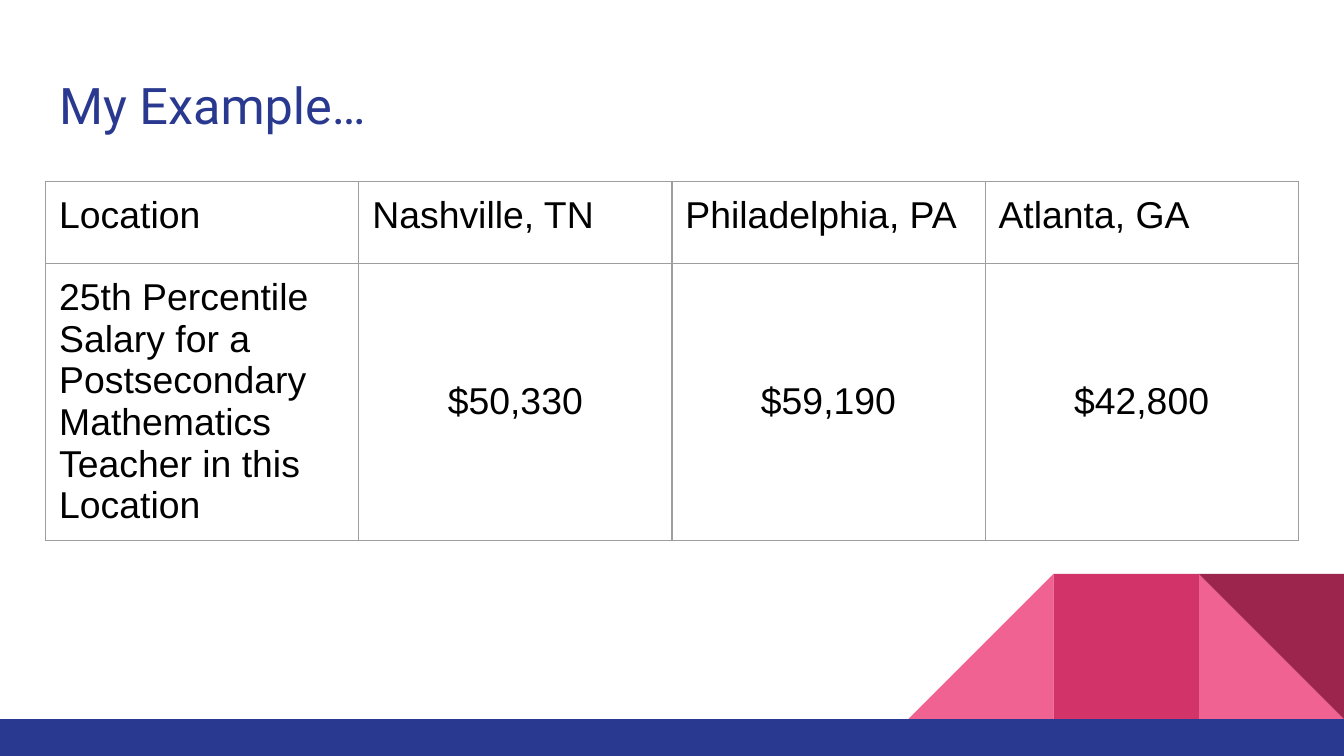
import pptx
import pptx.util
import pptx.oxml
import pptx.dml.color
import pptx.enum.shapes
import pptx.enum.text
from pptx.util import Inches

RGBColor = pptx.dml.color.RGBColor
MSO_SHAPE = pptx.enum.shapes.MSO_SHAPE
PP_ALIGN = pptx.enum.text.PP_ALIGN
MSO_ANCHOR = pptx.enum.text.MSO_ANCHOR

NAVY = RGBColor(0x2A, 0x39, 0x90)
PINK = RGBColor(0xF0, 0x62, 0x92)
ROSE = RGBColor(0xD2, 0x33, 0x69)
WINE = RGBColor(0x9C, 0x25, 0x4D)
BLACK = RGBColor(0, 0, 0)
BORDER = "9E9E9E"


def write(tf, text, size=20, font="Arial", color=BLACK, align=PP_ALIGN.LEFT):
    p = tf.paragraphs[0]
    p.alignment = align
    r = p.add_run()
    r.text = text
    r.font.size = pptx.util.Pt(size)
    r.font.name = font
    r.font.color.rgb = color


def add_border(cell):
    tcPr = cell._tc.get_or_add_tcPr()
    for i, side in enumerate(("lnL", "lnR", "lnT", "lnB")):
        tcPr.insert(i, pptx.oxml.parse_xml(
            f'<a:{side} xmlns:a="http://schemas.openxmlformats.org/drawingml/2006/main" w="9525">'
            f'<a:solidFill><a:srgbClr val="{BORDER}"/></a:solidFill></a:{side}>'))


# Widescreen 16:9 slide
prs = pptx.Presentation()
prs.slide_width = Inches(10)
prs.slide_height = Inches(10 * 9 / 16)
s = prs.slides.add_slide(prs.slide_layouts[5])

# Corner decoration and bottom band
SIDE = 1.08
TOP = 4.27
tiles = [
    (MSO_SHAPE.RIGHT_TRIANGLE, 10 - SIDE, TOP, SIDE, SIDE, PINK, False, 0),
    (MSO_SHAPE.RIGHT_TRIANGLE, 10 - 3 * SIDE, TOP, SIDE, SIDE, PINK, True, 0),
    (MSO_SHAPE.RECTANGLE, 10 - 2 * SIDE, TOP, SIDE, SIDE, ROSE, False, 0),
    (MSO_SHAPE.RIGHT_TRIANGLE, 10 - SIDE, TOP, SIDE, SIDE, WINE, False, 180),
    (MSO_SHAPE.RECTANGLE, 0, TOP + SIDE, 10, 0.28, NAVY, False, 0),
]
for kind, left, top, width, height, color, flip, rotation in tiles:
    sp = s.shapes.add_shape(kind, Inches(left), Inches(top), Inches(width), Inches(height))
    sp.shadow.inherit = False
    sp.fill.solid()
    sp.fill.fore_color.rgb = color
    sp.line.fill.background()
    sp.rotation = rotation
    if flip:
        sp._element.spPr.xfrm.set("flipH", "1")

# Title
title = s.shapes.title
title.left, title.top = Inches(0.34), Inches(0.45)
title.width, title.height = Inches(9.32), Inches(0.66)
tf = title.text_frame
tf.margin_left = tf.margin_right = tf.margin_top = tf.margin_bottom = Inches(0.1)
tf.vertical_anchor = MSO_ANCHOR.TOP
tf.auto_size = pptx.enum.text.MSO_AUTO_SIZE.NONE
write(tf, "My Example…", size=27, font="Roboto", color=NAVY)

# Salary table
rows = [
    ["Location", "Nashville, TN", "Philadelphia, PA", "Atlanta, GA"],
    ["25th Percentile Salary for a Postsecondary Mathematics Teacher in this Location",
     "$50,330", "$59,190", "$42,800"],
]
table = s.shapes.add_table(2, 4, Inches(0.34), Inches(1.35), Inches(9.32), Inches(2.67)).table
table.first_row = table.horz_banding = False
for row, height in zip(table.rows, (0.61, 2.06)):
    row.height = Inches(height)
for i, row in enumerate(rows):
    for j, text in enumerate(row):
        cell = table.cell(i, j)
        cell.margin_left = cell.margin_right = Inches(0.1)
        cell.margin_top = cell.margin_bottom = Inches(0.1)
        cell.fill.background()
        add_border(cell)
        is_salary = i > 0 and j > 0
        cell.vertical_anchor = MSO_ANCHOR.MIDDLE if is_salary else MSO_ANCHOR.TOP
        write(cell.text_frame, text, align=PP_ALIGN.CENTER if is_salary else PP_ALIGN.LEFT)

prs.save("out.pptx")
